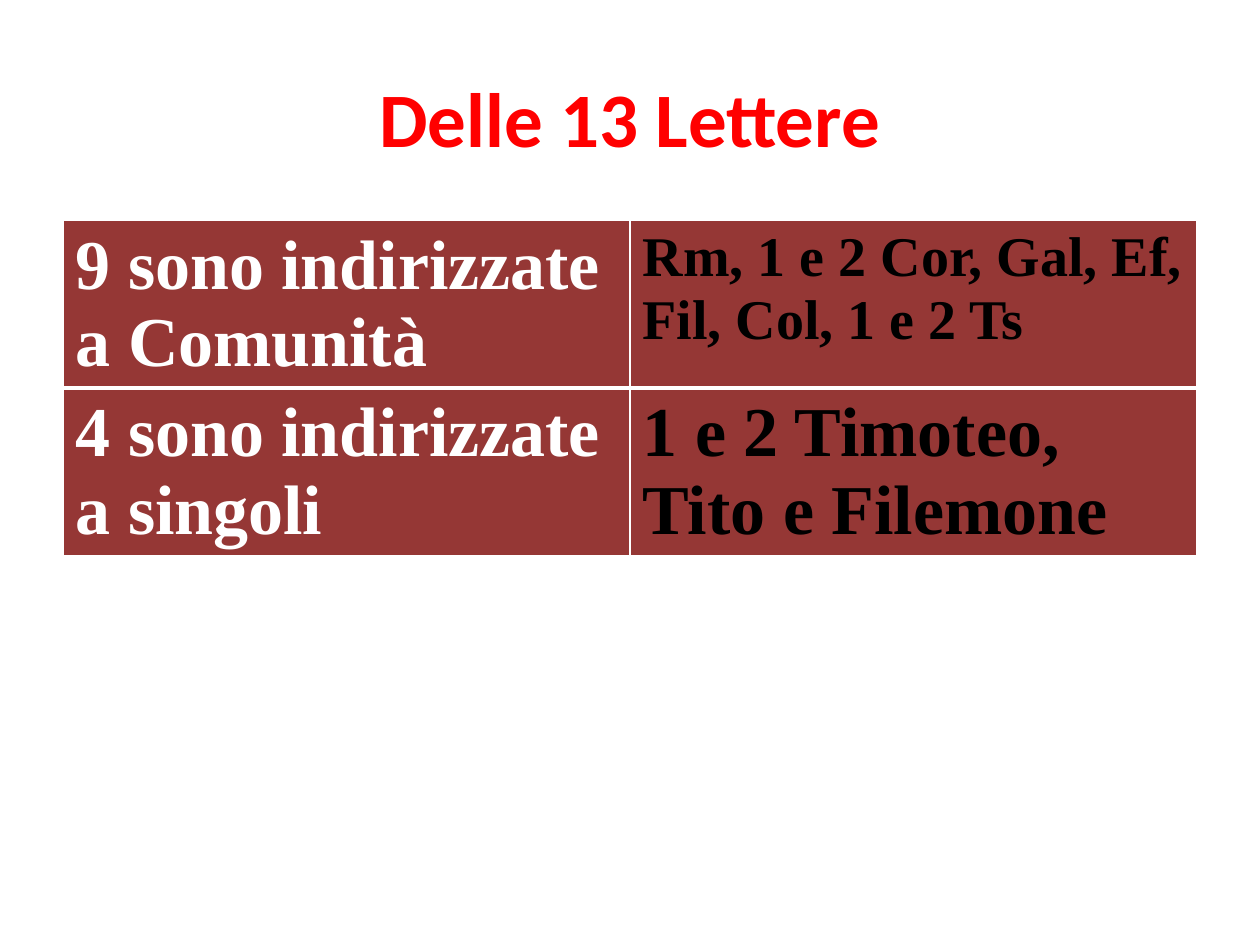
from lxml import etree
from pptx import Presentation
from pptx.dml.color import RGBColor
from pptx.enum import text
from pptx.oxml import ns
from pptx.util import Inches, Pt


def add_run(paragraph, wording, font_name, size, color):
    run = paragraph.add_run()
    run.text = wording
    run.font.name = font_name
    run.font.size = Pt(size)
    run.font.bold = True
    run.font.color.rgb = RGBColor.from_string(color)


def set_border(cell, position, side, points, color):
    line = etree.Element(ns.qn(f"a:ln{side}"), w=str(Pt(points)))
    fill = etree.SubElement(line, ns.qn("a:solidFill"))
    etree.SubElement(fill, ns.qn("a:srgbClr"), val=color)
    cell._tc.get_or_add_tcPr().insert(position, line)


presentation = Presentation()
presentation.slide_width = Inches(10)
presentation.slide_height = Inches(7.5)
slide = presentation.slides.add_slide(presentation.slide_layouts[5])

title = slide.shapes.title
title.left, title.top = Inches(0.5), Inches(0.3)
title.width, title.height = Inches(9), Inches(1.25)
title.text_frame.vertical_anchor = text.MSO_ANCHOR.MIDDLE
title_paragraph = title.text_frame.paragraphs[0]
title_paragraph.alignment = text.PP_ALIGN.CENTER
add_run(title_paragraph, "Delle 13 Lettere", "Calibri", 44, "FF0000")

letters = [
    [("9 sono indirizzate a Comunità", 40, "FFFFFF"),
     ("Rm, 1 e 2 Cor, Gal, Ef, Fil, Col, 1 e 2 Ts", 32, "000000")],
    [("4 sono indirizzate a singoli", 40, "FFFFFF"),
     ("1 e 2 Timoteo, Tito e Filemone", 40, "000000")],
]
row_borders = [
    {"L": 1, "R": 1, "T": 1, "B": 3},
    {"L": 1, "R": 1, "T": 3, "B": 1},
]
table = slide.shapes.add_table(
    2, 2, Inches(0.5), Inches(1.75), Inches(9), Inches(2.66)).table

for row, entries, borders in zip(table.rows, letters, row_borders):
    for cell, (wording, size, color) in zip(row.cells, entries):
        cell.fill.solid()
        cell.fill.fore_color.rgb = RGBColor.from_string("953735")
        add_run(cell.text_frame.paragraphs[0], wording,
                "Times New Roman", size, color)
        for position, (side, points) in enumerate(borders.items()):
            set_border(cell, position, side, points, "FFFFFF")

presentation.save("out.pptx")
